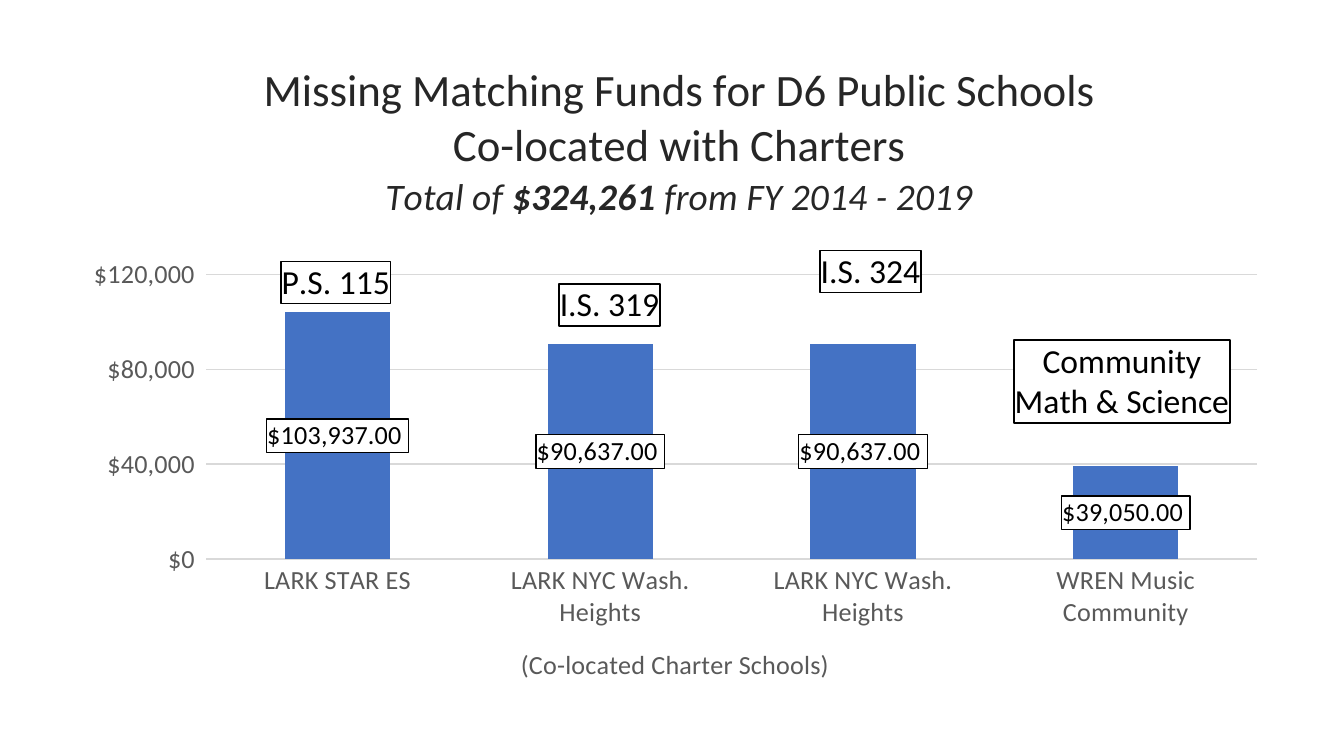
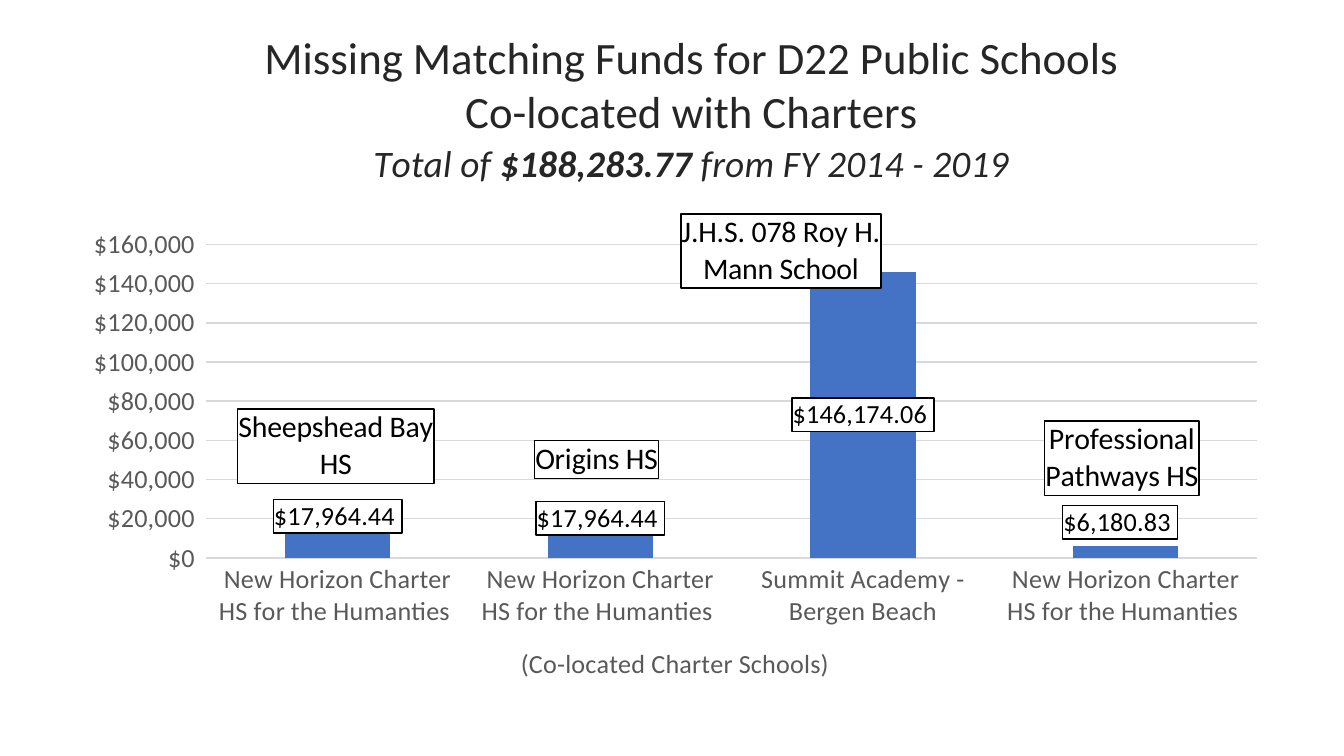
import pptx
import pptx.util
import pptx.dml.color
import pptx.chart.data
import pptx.enum.chart
import pptx.enum.text
import pptx.oxml

Pt = pptx.util.Pt
RGB = pptx.dml.color.RGBColor
ENUM = pptx.enum.chart
BLACK = RGB(0x00, 0x00, 0x00)
DARK = RGB(0x26, 0x26, 0x26)
GREY = RGB(0x59, 0x59, 0x59)
PALE = RGB(0xD9, 0xD9, 0xD9)
BLUE = RGB(0x44, 0x72, 0xC4)
ORANGE = RGB(0xED, 0x7D, 0x31)
FACE = "Calibri"
WIDE = 649.5
NS = (
    'xmlns:c="http://schemas.openxmlformats.org/drawingml/2006/chart" '
    'xmlns:a="http://schemas.openxmlformats.org/drawingml/2006/main"'
)
WHOLE = '"$"#,##0_);[Red]\\("$"#,##0\\)'
CENTS = '"$"#,##0.00_);[Red]\\("$"#,##0.00\\)'
BOX = (
    f'<c:spPr {NS}><a:solidFill><a:srgbClr val="FFFFFF"/></a:solidFill>'
    '<a:ln w="9525"><a:solidFill><a:srgbClr val="000000"/></a:solidFill></a:ln></c:spPr>'
)
BARE = (
    f'<c:extLst {NS}><c:ext uri="{{CE6537A1-D6FC-4f65-9D91-7224C49458BB}}" '
    'xmlns:c15="http://schemas.microsoft.com/office/drawing/2012/chart">'
    '<c15:showLeaderLines val="0"/></c:ext></c:extLst>'
)


def place(el, spot, high, tags=""):
    for old in el.xpath("c:layout"):
        el.remove(old)
    sides = zip("xywh", spot, (WIDE, high, WIDE, high))
    parts = "".join(f'<c:{key} val="{num / full:.4f}"/>' for key, num, full in sides)
    node = pptx.oxml.parse_xml(
        f"<c:layout {NS}><c:manualLayout>{tags}{parts}</c:manualLayout></c:layout>"
    )
    first = el.xpath("c:idx|c:tx")
    if first:
        first[0].addnext(node)
    else:
        el.insert(0, node)


def write(frame, lines, tint):
    for row, line in enumerate(lines):
        para = frame.paragraphs[0] if row == 0 else frame.add_paragraph()
        para.alignment = pptx.enum.text.PP_ALIGN.CENTER
        for text, size, bold, slant in line:
            run = para.add_run()
            run.text = text
            font = run.font
            font.name, font.size = FACE, Pt(size)
            font.bold, font.italic = bold, slant
            font.color.rgb = tint


EDGE = '<c:xMode val="edge"/><c:yMode val="edge"/>'
INNER = '<c:layoutTarget val="inner"/>' + EDGE
HUMAN = "New Horizon Charter HS for the Humanties "

pages = [
    dict(
        area="D6", total="$324,261", top=29.5, high=351, head=(101.5, 1.5),
        plot=(73, 117.5, 563, 152.5), peak=120000, step=40000, size=18,
        cats=["LARK STAR ES", "LARK NYC Wash. Heights", "LARK NYC Wash. Heights",
              "WREN Music Community"],
        vals=[103937, 90637, 90637, 39050],
        names=["P.S. 115", "I.S. 319", "I.S. 324", "Community Math & Science"],
        moves=[(-1, -16), (5, -21), (4, -39), (-2, -45.5)],
        shifts=[(0, 0)] * 4,
    ),
    dict(
        area="D22", total="$188,283.77", top=13, high=367, head=(102, 0.5),
        plot=(73, 118, 563, 168), peak=160000, step=20000, size=16,
        cats=[HUMAN, HUMAN, "Summit Academy - Bergen Beach", HUMAN],
        vals=[17964.44, 17964.44, 146174.06, 6180.83],
        names=["Sheepshead Bay HS", "Origins HS", "J.H.S. 078 Roy H. Mann School",
               "Professional Pathways HS"],
        moves=[(-1, -41), (-2, -34), (-44, -11), (-2, -47)],
        shifts=[(0, -13), (0, -12), (0, 0), (-3, -16)],
    ),
]

deck = pptx.Presentation()
deck.slide_width, deck.slide_height = Pt(720), Pt(405)

for page in pages:
    high = page["high"]
    slide = deck.slides.add_slide(deck.slide_layouts[6])
    data = pptx.chart.data.CategoryChartData()
    data.categories = page["cats"]
    data.add_series("Series 1", page["vals"])
    data.add_series("Series 2", [0] * 4)
    chart = slide.shapes.add_chart(
        ENUM.XL_CHART_TYPE.COLUMN_STACKED, Pt(37.5), Pt(page["top"]), Pt(WIDE), Pt(high), data
    ).chart
    chart.has_legend = False
    chart.font.name, chart.font.size = FACE, Pt(10)
    chart.font.color.rgb = BLACK

    chart.has_title = True
    write(chart.chart_title.text_frame, [
        [(f"Missing Matching Funds for {page['area']} Public Schools", 24, False, False)],
        [("Co-located with Charters", 24, False, False)],
        [("Total of ", 20, False, True), (page["total"], 20, True, True),
         (" from FY 2014 - 2019", 20, False, True)],
    ], DARK)
    place(chart.chart_title._element, page["head"], high, EDGE)

    base, side = chart.category_axis, chart.value_axis
    for axis in (base, side):
        axis.major_tick_mark = axis.minor_tick_mark = ENUM.XL_TICK_MARK.NONE
        font = axis.tick_labels.font
        font.name, font.size = FACE, Pt(14)
        font.color.rgb = GREY
    side.minimum_scale, side.maximum_scale = 0, page["peak"]
    side.major_unit = page["step"]
    side.tick_labels.number_format = WHOLE
    side.tick_labels.number_format_is_linked = False
    side.format.line.fill.background()
    side.has_major_gridlines = True
    for line in (base.format.line, side.major_gridlines.format.line):
        line.color.rgb = PALE
        line.width = Pt(0.75)
    base.has_title = True
    write(base.axis_title.text_frame,
          [[("(Co-located Charter Schools)", 14, False, False)]], GREY)
    left, top, wide, tall = page["plot"]
    place(base.axis_title._element, (239, top + tall + 44), high, EDGE)
    place(chart._chartSpace.xpath("c:chart/c:plotArea")[0], page["plot"], high, INNER)

    plot = chart.plots[0]
    plot.gap_width, plot.overlap = 150, 100
    plot.vary_by_categories = False
    money, school = plot.series
    for bars, tint in ((money, BLUE), (school, ORANGE)):
        bars.format.fill.solid()
        bars.format.fill.fore_color.rgb = tint
    for at, name in enumerate(page["names"]):
        label = money.points[at].data_label
        label.font.name, label.font.size = FACE, Pt(14)
        label.font.color.rgb = BLACK
        label.position = ENUM.XL_LABEL_POSITION.CENTER
        label = school.points[at].data_label
        write(label.text_frame, [[(name, page["size"], False, False)]], BLACK)
        label.text_frame.word_wrap = True
        label.position = ENUM.XL_LABEL_POSITION.CENTER
    money.data_labels.number_format = CENTS
    money.data_labels.number_format_is_linked = False
    money.data_labels.show_value = True

    for bars, spots in ((money, page["shifts"]), (school, page["moves"])):
        group = bars._element.xpath("c:dLbls")[0]
        for old in group.xpath("c:showLeaderLines"):
            old.set("val", "0")
        group.append(pptx.oxml.parse_xml(BARE))
        for node, spot in zip(group.xpath("c:dLbl"), spots):
            place(node, spot, high)
            for old in node.xpath("c:spPr"):
                node.remove(old)
            mark = node.xpath("c:txPr|c:dLblPos")[0]
            if bars is money:
                form = pptx.oxml.parse_xml(f'<c:numFmt {NS} sourceLinked="0"/>')
                form.set("formatCode", CENTS)
                mark.addprevious(form)
            mark.addprevious(pptx.oxml.parse_xml(BOX))

deck.save("out.pptx")
